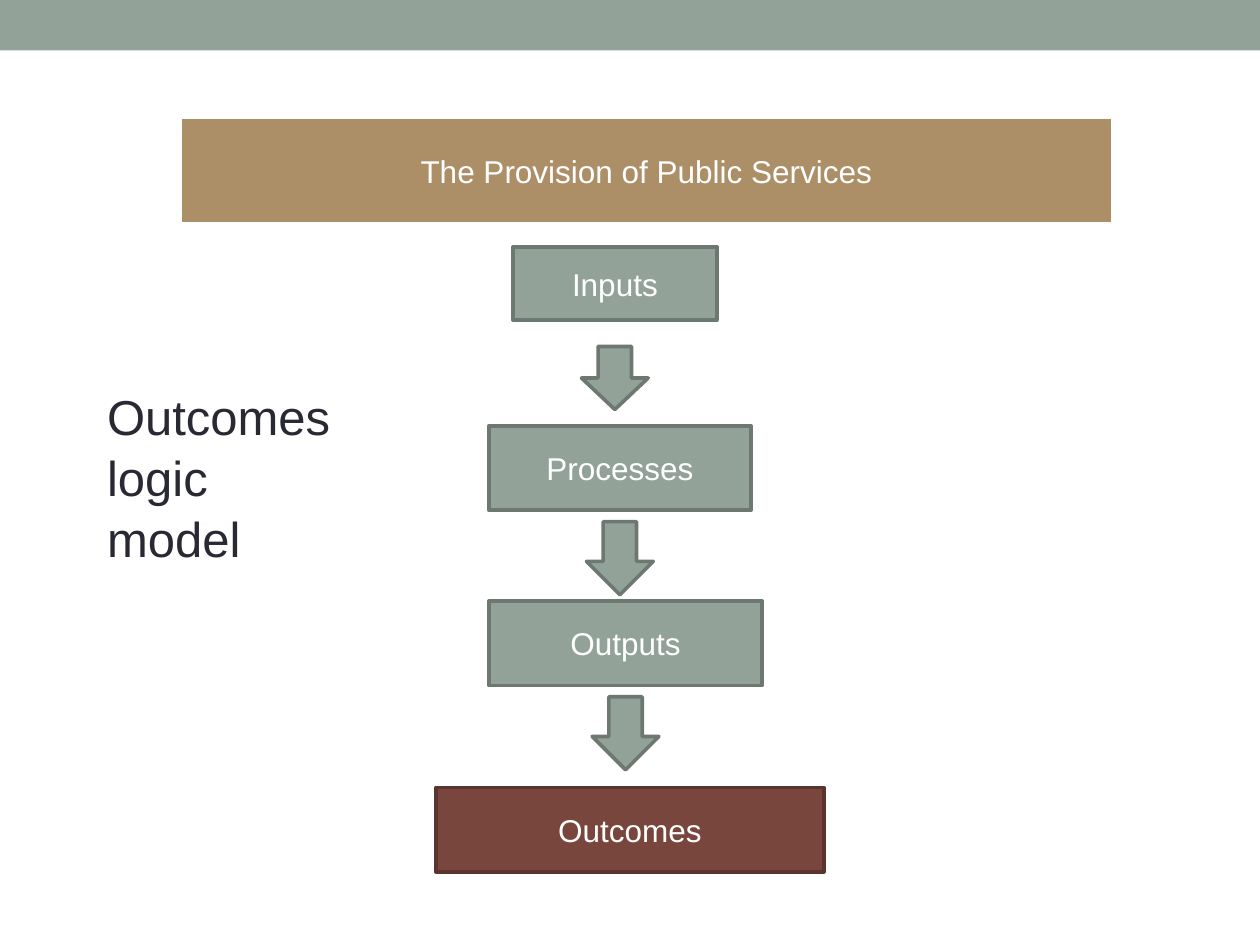
import dataclasses

import pptx
import pptx.dml.color
import pptx.enum.shapes
import pptx.enum.text
import pptx.util

SHAPE = pptx.enum.shapes.MSO_SHAPE
ALIGN = pptx.enum.text.PP_ALIGN
ANCHOR = pptx.enum.text.MSO_ANCHOR
TITLE_ONLY = 5


@dataclasses.dataclass(frozen=True)
class Theme:
    font: str = "Arial"
    sage: str = "93A299"
    sage_edge: str = "6D7871"
    brick: str = "79463D"
    brick_edge: str = "5A342D"
    tan: str = "AD8F67"
    white: str = "FFFFFF"
    ink: str = "292934"
    label_size: float = 18
    title_size: float = 28
    edge: float = 2.08
    banner_edge: float = 3.5


def rgb(value):
    return pptx.dml.color.RGBColor.from_string(value)


class LogicModelSlide:
    """Places elements on a grid of 100 columns by 75 rows."""

    def __init__(self, deck, theme):
        self.theme = theme
        self.column = deck.slide_width / 100
        self.row = deck.slide_height / 75
        self.slide = deck.slides.add_slide(deck.slide_layouts[TITLE_ONLY])

    def place(self, left, top, width, height):
        return (round(left * self.column), round(top * self.row),
                round(width * self.column), round(height * self.row))

    def add_words(self, paragraph, words, size, color, align):
        paragraph.alignment = align
        run = paragraph.add_run()
        run.text = words
        run.font.name = self.theme.font
        run.font.size = pptx.util.Pt(size)
        run.font.color.rgb = rgb(color)

    def title(self, words, *area):
        heading = self.slide.shapes.title
        heading.left, heading.top, heading.width, heading.height = self.place(*area)
        frame = heading.text_frame
        frame.word_wrap = True
        frame.auto_size = pptx.enum.text.MSO_AUTO_SIZE.NONE
        frame.vertical_anchor = ANCHOR.TOP
        frame.paragraphs[0].line_spacing = 1.04
        self.add_words(frame.paragraphs[0], words, self.theme.title_size,
                       self.theme.ink, ALIGN.LEFT)

    def block(self, preset, area, fill, edge=None, weight=None):
        block = self.slide.shapes.add_shape(preset, *self.place(*area))
        block.shadow.inherit = False
        block.fill.solid()
        block.fill.fore_color.rgb = rgb(fill)
        if edge:
            block.line.color.rgb = rgb(edge)
            block.line.width = pptx.util.Pt(weight or self.theme.edge)
        else:
            block.line.fill.background()
        return block

    def box(self, words, area, fill, edge, weight=None):
        frame = self.block(SHAPE.RECTANGLE, area, fill, edge, weight).text_frame
        frame.word_wrap = True
        frame.vertical_anchor = ANCHOR.MIDDLE
        self.add_words(frame.paragraphs[0], words, self.theme.label_size,
                       self.theme.white, ALIGN.CENTER)

    def arrow_down(self, center, top, height, width=5.3):
        self.block(SHAPE.DOWN_ARROW, (center - width / 2, top, width, height),
                   self.theme.sage, self.theme.sage_edge)


def main():
    deck = pptx.Presentation()
    deck.slide_width = pptx.util.Inches(10)
    deck.slide_height = pptx.util.Inches(7.5)
    theme = Theme()
    page = LogicModelSlide(deck, theme)

    page.block(SHAPE.RECTANGLE, (0, 0, 100, 4), theme.sage)
    page.title("Outcomes logic model", 7.5, 30, 20, 15.1)
    page.box("The Provision of Public Services", (14.2, 9.2, 74.2, 8.7),
             theme.tan, theme.white, theme.banner_edge)

    # Each stage: words, box area, then top and height of the arrow below it
    stages = [
        ("Inputs", (40.7, 19.6, 16.2, 5.8), (27.5, 5)),
        ("Processes", (38.8, 33.8, 20.8, 6.7), (41.4, 5.8)),
        ("Outputs", (38.8, 47.7, 21.7, 6.7), (55.3, 5.8)),
    ]
    for words, area, arrow in stages:
        left, _, width, _ = area
        page.box(words, area, theme.sage, theme.sage_edge)
        page.arrow_down(left + width / 2, *arrow)
    page.box("Outcomes", (34.6, 62.5, 30.8, 6.7), theme.brick, theme.brick_edge)

    deck.save("out.pptx")


if __name__ == "__main__":
    main()
